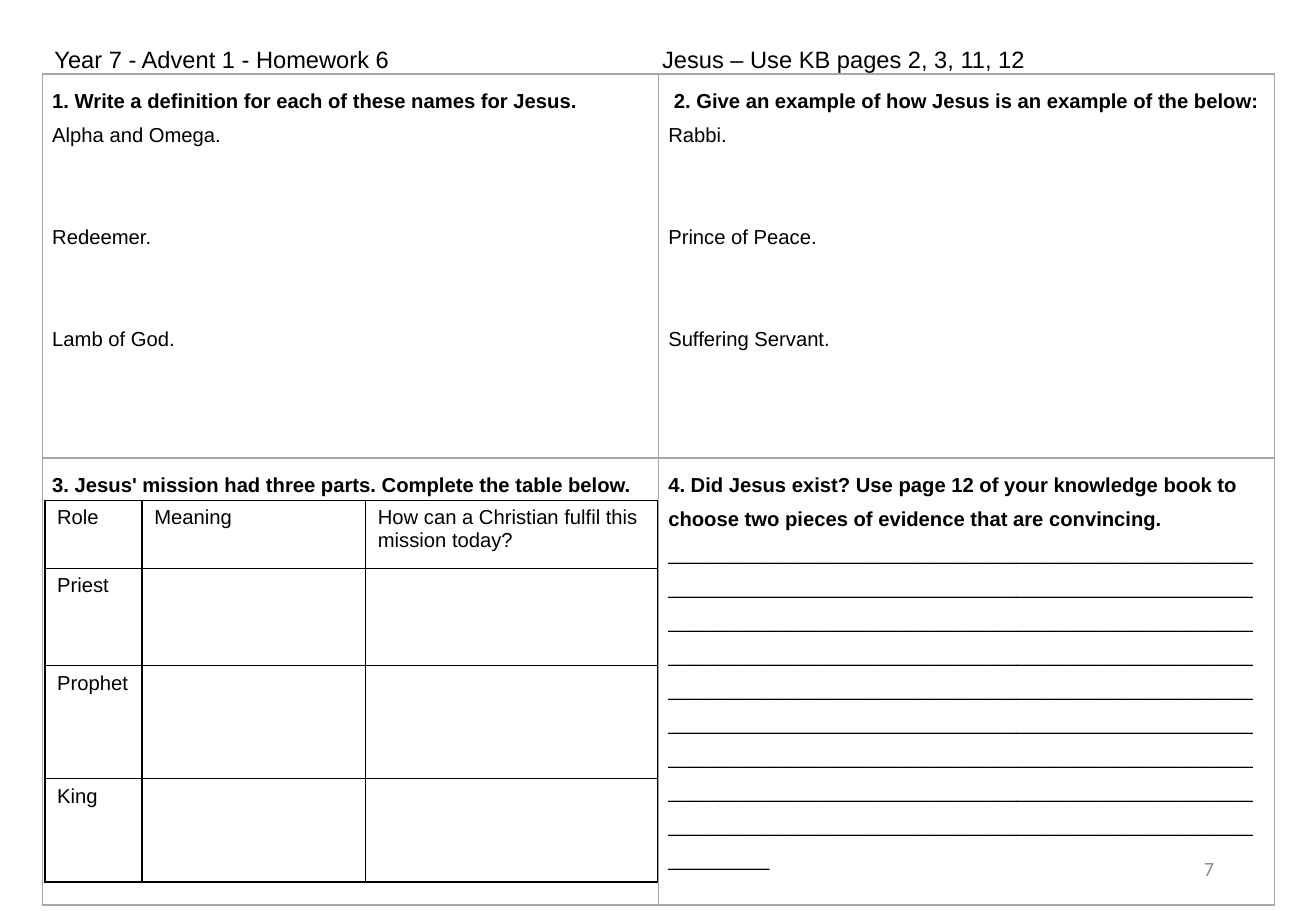
import pptx
import pptx.util
import pptx.dml.color
import pptx.enum.shapes
import pptx.enum.text
import pptx.oxml

W, H = pptx.util.Inches(10.83), pptx.util.Inches(7.5)
COLUMNS, ROWS = 1083, 750
ALIGN = pptx.enum.text.PP_ALIGN
ANCHOR = pptx.enum.text.MSO_ANCHOR
NS = 'xmlns:a="http://schemas.openxmlformats.org/drawingml/2006/main"'

BODY = {"name": "Arial", "size": pptx.util.Pt(12), "bold": False}
BOLD = {**BODY, "bold": True}
TITLE = {**BODY, "size": pptx.util.Pt(14)}
PAGE = {"name": "Calibri", "size": pptx.util.Pt(12)}
WIDE = {"line_spacing": 1.5}
SPACED = {**WIDE, "space_before": pptx.util.Pt(40.3)}
TIGHT = {"margin_left": pptx.util.Inches(0.08), "margin_right": pptx.util.Inches(0.08),
         "margin_top": pptx.util.Inches(0.04), "margin_bottom": pptx.util.Inches(0.04)}

NAMES = ["Alpha and Omega.", "Redeemer.", "Lamb of God."]
EXAMPLES = ["Rabbi.", "Prince of Peace.", "Suffering Servant."]
ANSWER_LINES = "_" * (9 * 52 + 9)
MISSION = [["Role", "Meaning", "How can a Christian fulfil this mission today?"],
           ["Priest", "", ""], ["Prophet", "", ""], ["King", "", ""]]


def col(n):
    return round(W * n / COLUMNS)


def row(n):
    return round(H * n / ROWS)


def box(x, y, w, h):
    return col(x), row(y), col(w), row(h)


def color(value):
    return pptx.dml.color.RGBColor.from_string(value)


def apply(target, values):
    for name, value in values.items():
        setattr(target, name, value)


def write(tf, paragraphs, ink="000000"):
    for i, (text, font, layout) in enumerate(paragraphs):
        p = tf.add_paragraph() if i else tf.paragraphs[0]
        apply(p, layout)
        r = p.add_run()
        r.text = text
        apply(r.font, font)
        r.font.color.rgb = color(ink)


def border(cell, ink):
    for side in ("lnL", "lnR", "lnT", "lnB"):
        line = pptx.oxml.parse_xml(
            f'<a:{side} {NS} w="12700"><a:solidFill><a:srgbClr val="{ink}"/>'
            f'</a:solidFill></a:{side}>')
        cell.fill._xPr.append(line)


def add_table(s, x, y, widths, heights, contents, ink, margins):
    shape = s.shapes.add_table(len(heights), len(widths),
                               *box(x, y, sum(widths), sum(heights)))
    table = shape.table
    apply(table, {"first_row": False, "horz_banding": False})
    for column, width in zip(table.columns, widths):
        column.width = col(width)
    for line, height, cells in zip(table.rows, heights, contents):
        line.height = row(height)
        for cell, paragraphs in zip(line.cells, cells):
            border(cell, ink)
            cell.fill.background()
            apply(cell, margins)
            write(cell.text_frame, paragraphs)


def add_page_number(s, number):
    sp = s.shapes.add_textbox(*box(765, 695, 244, 40))
    apply(sp.text_frame, {"word_wrap": True, "vertical_anchor": ANCHOR.MIDDLE})
    write(sp.text_frame, [(number, PAGE, {"alignment": ALIGN.RIGHT})], "8C8C8C")


def add_header(s, left, right):
    sp = s.shapes.add_shape(pptx.enum.shapes.MSO_SHAPE.RECTANGLE, *box(35, 20, 1036, 42))
    sp.shadow.inherit = False
    sp.fill.solid()
    sp.fill.fore_color.rgb = color("FFFFFF")
    sp.line.fill.background()
    tf = sp.text_frame
    apply(tf, {"word_wrap": True, "vertical_anchor": ANCHOR.TOP})
    write(tf, [(f"{left}\t{right}", TITLE, {**WIDE, "alignment": ALIGN.LEFT})])
    tabs = pptx.oxml.parse_xml(
        f'<a:tabLst {NS}><a:tab pos="{col(500)}" algn="l"/></a:tabLst>')
    tf.paragraphs[0]._p.get_or_add_pPr().append(tabs)


def question(heading, prompts=()):
    return [(heading, BOLD, WIDE)] + [
        (prompt, BODY, SPACED if i else WIDE) for i, prompt in enumerate(prompts)]


def main():
    prs = pptx.Presentation()
    apply(prs, {"slide_width": W, "slide_height": H})
    s = prs.slides.add_slide(prs.slide_layouts[6])
    add_page_number(s, "7")
    add_header(s, "Year 7 - Advent 1 - Homework 6", "Jesus – Use KB pages 2, 3, 11, 12")
    questions = [
        [question("1. Write a definition for each of these names for Jesus.", NAMES),
         question("\u00a02. Give an example of how Jesus is an example of the below:".replace("\u00a0", " "),
                  EXAMPLES)],
        [question("3. Jesus' mission had three parts. Complete the table below."),
         question("4. Did Jesus exist? Use page 12 of your knowledge book to choose "
                  "two pieces of evidence that are convincing.", [ANSWER_LINES])]]
    add_table(s, 35, 61, [507, 507], [316, 349], questions, "A6A6A6", TIGHT)
    mission = [[[(text, BODY, {})] for text in cells] for cells in MISSION]
    add_table(s, 37, 412, [80, 184, 240], [56, 80, 93, 85], mission, "000000", {})
    prs.save("out.pptx")


if __name__ == "__main__":
    main()
